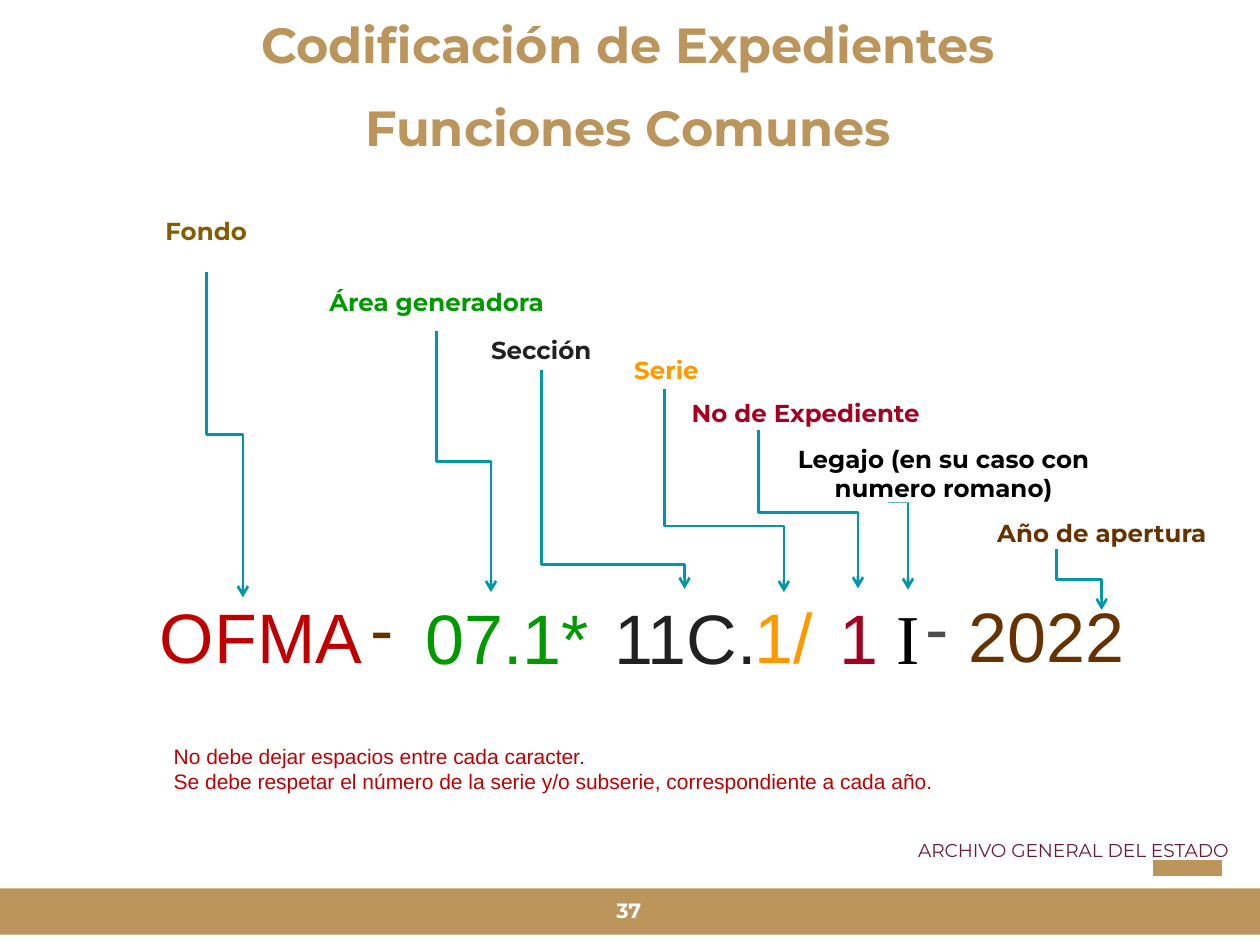
from lxml.etree import SubElement
from pptx import Presentation
from pptx.dml.color import RGBColor
from pptx.enum.shapes import MSO_CONNECTOR, MSO_SHAPE
from pptx.enum.text import MSO_ANCHOR, PP_ALIGN
from pptx.oxml.ns import qn
from pptx.util import Pt

COLORS = {
    "gold": "BC955C", "white": "FFFFFF", "wine": "691B31", "red": "C00000",
    "ochre": "835E01", "green": "009900", "dark": "212121", "orange": "FF9900",
    "crimson": "A50021", "black": "000000", "brown": "663300", "gray": "4D4D4D",
    "teal": "0097A7",
}
HEADING_FONT, CODE_FONT, ROMAN_FONT = "Montserrat", "Arial", "Times New Roman"

TITLE = ["Codificación de Expedientes", "Funciones Comunes"]
NOTES = [
    "No debe dejar espacios entre cada caracter.",
    "Se debe respetar el número de la serie y/o subserie, correspondiente a cada año.",
]
# Text, colour, box (left, top, width, height)
LABELS = [
    (" Fondo", "ochre", (82, 115.2, 67.7, 33.8)),
    ("Área generadora", "green", (172.8, 155.5, 153.4, 33.8)),
    ("Sección", "dark", (270, 188.6, 78.5, 23)),
    ("Serie", "orange", (344.9, 200.2, 72, 22.3)),
    ("No de Expediente", "crimson", (367.2, 218.9, 186.5, 33.8)),
    ("Año de apertura", "brown", (547.2, 287.3, 164.9, 33.8)),
]
FILE_LABEL = ("Legajo (en su caso con numero romano)", "black", (437, 253.4, 204.5, 33.8))
# Start x, start y, end x, end y, height of the bend
ARROWS = [
    (118.1, 155.5, 138.8, 341.3, 248.4),
    (249.3, 188.9, 280.6, 338.4, 263.6),
    (309.5, 211.7, 391.2, 336.5, 322.7),
    (379.6, 222.5, 447.9, 338.4, 300.5),
    (433.6, 245.5, 490.3, 336.2, 292.9),
    (507.6, 271.4, 518.8, 337, 286.6),
    (603.8, 313.9, 629.5, 348.5, 331.2),
]
# Text, colour, font, box
CODE_PARTS = [
    ("OFMA", "red", CODE_FONT, (56.2, 335.5, 185.8, 36)),
    ("-", "brown", CODE_FONT, (201.6, 330.5, 33.8, 50.4)),
    ("07.1*", "green", CODE_FONT, (221, 336.2, 137.5, 45.4)),
    ("11C.", "dark", CODE_FONT, (337.7, 336.2, 108, 39.6)),
    ("1/", "orange", CODE_FONT, (411.1, 335.5, 73.4, 39.6)),
    ("1", "crimson", CODE_FONT, (456.5, 336.2, 68.4, 39.6)),
    ("I", "black", ROMAN_FONT, (501.8, 336.2, 33.8, 39.6)),
    ("-", "gray", CODE_FONT, (518.4, 329.8, 33.8, 50.4)),
    ("2022", "brown", CODE_FONT, (529.9, 334.8, 136.1, 39.6)),
]

presentation = Presentation()
presentation.slide_width, presentation.slide_height = Pt(720), Pt(540)
slide = presentation.slides.add_slide(presentation.slide_layouts[6])


def color(name):
    return RGBColor.from_string(COLORS[name])


def write(shape, lines, font, size, color_name, bold=False, align=PP_ALIGN.CENTER,
          anchor=MSO_ANCHOR.TOP, margins=(7.2, 3.6), wrap=True, gap=0, spacing=None):
    frame = shape.text_frame
    frame.word_wrap = wrap
    frame.vertical_anchor = anchor
    frame.margin_left = frame.margin_right = Pt(margins[0])
    frame.margin_top = frame.margin_bottom = Pt(margins[1])
    for index, line in enumerate(lines):
        paragraph = frame.add_paragraph() if index else frame.paragraphs[0]
        paragraph.alignment = align
        paragraph.line_spacing = spacing
        paragraph.space_before = Pt(gap)
        run = paragraph.add_run()
        run.text = line
        run.font.name, run.font.size, run.font.bold = font, Pt(size), bold
        run.font.color.rgb = color(color_name)


def add_text(box, lines, *style, **options):
    write(slide.shapes.add_textbox(*map(Pt, box)), lines, *style, **options)


def add_rectangle(box, fill):
    shape = slide.shapes.add_shape(MSO_SHAPE.RECTANGLE, *map(Pt, box))
    shape.shadow.inherit = False
    shape.fill.solid()
    shape.fill.fore_color.rgb = color(fill)
    shape.line.fill.background()
    return shape


def add_label(text, color_name, box):
    write(add_rectangle(box, "white"), [text], HEADING_FONT, 14, color_name,
          bold=True, anchor=MSO_ANCHOR.MIDDLE)


def add_line(kind, points, color_name, width):
    connector = slide.shapes.add_connector(kind, *map(Pt, points))
    connector.line.color.rgb = color(color_name)
    connector.line.width = Pt(width)
    SubElement(connector.element.spPr, qn("a:effectLst"))
    return connector


def add_arrow(x1, y1, x2, y2, bend):
    # The elbow runs sideways by nature: lay it flat, mirrored, then turn it
    center_x, center_y = (x1 + x2) / 2, (y1 + y2) / 2
    half_length, half_depth = (y2 - y1) / 2, (x2 - x1) / 2
    arrow = add_line(MSO_CONNECTOR.ELBOW, (
        center_x + half_length, center_y - half_depth,
        center_x - half_length, center_y + half_depth), "teal", 1.5)
    properties = arrow.element.spPr
    properties.find(qn("a:xfrm")).set("rot", str(270 * 60000))
    geometry = properties.find(qn("a:prstGeom"))
    adjustments = geometry.find(qn("a:avLst"))
    if adjustments is None:
        adjustments = SubElement(geometry, qn("a:avLst"))
    share = round((bend - y1) / (y2 - y1) * 100000)
    SubElement(adjustments, qn("a:gd"), name="adj1", fmla=f"val {share}")
    SubElement(properties.find(qn("a:ln")), qn("a:tailEnd"), type="arrow")


# Footer band, page number and institution
add_rectangle((-2.2, 507.6, 724.4, 26.6), "gold")
add_text((342, 507.6, 34.6, 26.6), ["37"], HEADING_FONT, 11.8, "white", bold=True,
         anchor=MSO_ANCHOR.MIDDLE, margins=(0, 7.2), spacing=0.9)
add_text((342.7, 476.6, 363.6, 20.2), ["ARCHIVO GENERAL DEL ESTADO"], HEADING_FONT,
         10.6, "wine", align=PP_ALIGN.RIGHT, margins=(4.3, 4.3), spacing=0.9)
add_line(MSO_CONNECTOR.STRAIGHT, (658.8, 496, 698.4, 496), "gold", 9)

# Title
add_text((54.7, 5, 608.4, 92.2), TITLE, HEADING_FONT, 28.2, "gold", bold=True,
         margins=(6.5, 2.9), gap=14)

# Labels, then arrows; the file label covers the top of its arrow
for label in LABELS:
    add_label(*label)
for arrow_points in ARROWS:
    add_arrow(*arrow_points)
add_label(*FILE_LABEL)

# Parts of the code
for text, color_name, font, box in CODE_PARTS:
    add_text(box, [text], font, 40, color_name, gap=4)

# Notes
add_text((92.2, 421.2, 478.1, 36.7), NOTES, CODE_FONT, 12, "red",
         align=PP_ALIGN.LEFT, wrap=False)

presentation.save("out.pptx")
